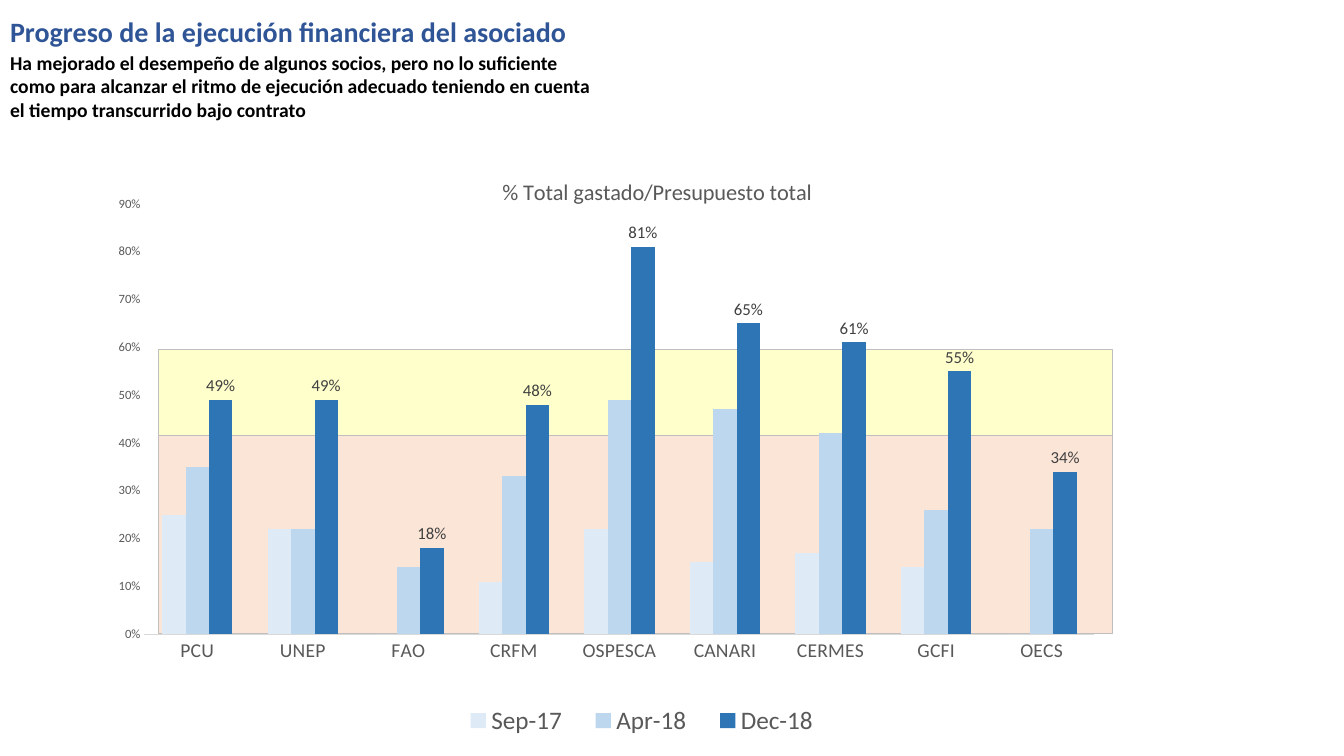
import dataclasses

import pptx
import pptx.chart.data
import pptx.dml.color
import pptx.enum.chart
import pptx.enum.shapes
import pptx.enum.text
import pptx.oxml
import pptx.oxml.ns
import pptx.util

WIDTH, HEIGHT = 13.33, 7.5
PERIODS = {
    "Sep-17": ("DEEBF7", (0.25, 0.22, 0, 0.11, 0.22, 0.15, 0.17, 0.14, 0)),
    "Apr-18": ("BDD7EE", (0.35, 0.22, 0.14, 0.33, 0.49, 0.47, 0.42, 0.26, 0.22)),
    "Dec-18": ("2E75B6", (0.49, 0.49, 0.18, 0.48, 0.81, 0.65, 0.61, 0.55, 0.34)),
}
PARTNERS = ("PCU", "UNEP", "FAO", "CRFM", "OSPESCA", "CANARI", "CERMES", "GCFI", "OECS")


def color(value):
    return pptx.dml.color.RGBColor.from_string(value)


def apply(target, **formats):
    for name, value in formats.items():
        setattr(target, name, value)


def chart_xml(content):
    return pptx.oxml.parse_xml(content.replace(">", f" {pptx.oxml.ns.nsdecls('c', 'a')}>", 1))


def arrange(element, index, **shares):
    for layout in element.findall(pptx.oxml.ns.qn("c:layout")):
        element.remove(layout)
    modes = '<c:xMode val="edge"/><c:yMode val="edge"/>'
    inner = '<c:layoutTarget val="inner"/>' if index == 0 else ""
    values = "".join(f'<c:{name} val="{share}"/>' for name, share in shares.items())
    element.insert(index, chart_xml(
        f"<c:layout><c:manualLayout>{inner}{modes}{values}</c:manualLayout></c:layout>"))


@dataclasses.dataclass
class SlideBuilder:
    page: object
    font: str = "Calibri"
    gray: str = "595959"

    def area(self, left, top, width, height):
        shares = zip((left, top, width, height), (WIDTH, HEIGHT) * 2)
        return [pptx.util.Inches(share * length / 100) for share, length in shares]

    def place(self, item, area):
        apply(item, **dict(zip(("left", "top", "width", "height"), self.area(*area))))

    def type_style(self, font, size, ink=None, bold=False):
        apply(font, name=self.font, size=pptx.util.Pt(size), bold=bold)
        font.color.rgb = color(ink or self.gray)

    def text(self, box, area, content, size, ink):
        self.place(box, area)
        apply(box.text_frame, text=content, word_wrap=True,
              vertical_anchor=pptx.enum.text.MSO_ANCHOR.TOP,
              auto_size=pptx.enum.text.MSO_AUTO_SIZE.NONE)
        para = box.text_frame.paragraphs[0]
        apply(para, alignment=pptx.enum.text.PP_ALIGN.LEFT, line_spacing=1.0,
              space_before=pptx.util.Pt(0))
        properties = para._p.get_or_add_pPr()
        properties.set("marL", "0")
        properties.set("indent", "0")
        properties.append(chart_xml("<a:buNone></a:buNone>"))
        self.type_style(para.runs[0].font, size, ink, bold=True)

    def band(self, area, fill):
        shape = self.page.shapes.add_shape(
            pptx.enum.shapes.MSO_SHAPE.RECTANGLE, *self.area(*area))
        shape.shadow.inherit = False
        shape.fill.solid()
        shape.fill.fore_color.rgb = color(fill)
        shape.line.color.rgb = color("BFBFBF")
        shape.line.width = pptx.util.Pt(0.75)

    def column_chart(self, area, title):
        enums = pptx.enum.chart
        data = pptx.chart.data.CategoryChartData(number_format="0%")
        data.categories = PARTNERS
        for period, (_, values) in PERIODS.items():
            data.add_series(period, values)
        chart = self.page.shapes.add_chart(
            enums.XL_CHART_TYPE.COLUMN_CLUSTERED, *self.area(*area), data).chart
        self.type_style(chart.font, 10, "000000")
        apply(chart, has_title=True, has_legend=True)
        self.chart_title(chart, title)
        self.chart_legend(chart)
        self.chart_axes(chart)
        self.chart_series(chart.plots[0])
        space = chart._chartSpace
        plot_area = space.chart.plotArea
        arrange(plot_area, 0, x=0.097, y=0.137, w=0.894, h=0.648)
        clear = "<c:spPr><a:noFill/><a:ln><a:noFill/></a:ln></c:spPr>"
        plot_area.append(chart_xml(clear))
        space.chart.addnext(chart_xml(clear))

    def chart_title(self, chart, content):
        frame = chart.chart_title.text_frame
        frame.text = content
        self.type_style(frame.paragraphs[0].runs[0].font, 16)
        arrange(chart.chart_title._element, 1, x=0.43, y=0.09)

    def chart_legend(self, chart):
        apply(chart.legend, position=pptx.enum.chart.XL_LEGEND_POSITION.BOTTOM,
              include_in_layout=False)
        self.type_style(chart.legend.font, 18)
        arrange(chart.legend._element, 1, x=0.38, y=0.88, w=0.37, h=0.07)

    def chart_axes(self, chart):
        none = pptx.enum.chart.XL_TICK_MARK.NONE
        for axis, size in ((chart.category_axis, 14), (chart.value_axis, 9)):
            apply(axis, has_major_gridlines=False, major_tick_mark=none, minor_tick_mark=none)
            self.type_style(axis.tick_labels.font, size)
        chart.category_axis.format.line.color.rgb = color("D9D9D9")
        chart.category_axis.format.line.width = pptx.util.Pt(0.75)
        apply(chart.value_axis, minimum_scale=0, maximum_scale=0.9, major_unit=0.1)
        apply(chart.value_axis.tick_labels, number_format="0%", number_format_is_linked=False)
        chart.value_axis.format.line.fill.background()

    def chart_series(self, plot):
        apply(plot, gap_width=150, overlap=0, vary_by_categories=False)
        for series, (fill, _) in zip(plot.series, PERIODS.values()):
            series.format.fill.solid()
            series.format.fill.fore_color.rgb = color(fill)
        labels = plot.series[-1].data_labels
        apply(labels, show_value=True, number_format="0%", number_format_is_linked=False,
              position=pptx.enum.chart.XL_LABEL_POSITION.OUTSIDE_END)
        self.type_style(labels.font, 12, "404040")


def main():
    deck = pptx.Presentation()
    apply(deck, slide_width=pptx.util.Inches(WIDTH), slide_height=pptx.util.Inches(HEIGHT))
    page = deck.slides.add_slide(deck.slide_layouts[1])
    builder = SlideBuilder(page)
    builder.text(page.shapes.title, (0, 1.2, 45.24, 7.73),
                 "Progreso de la ejecución financiera del asociado", 20, "2F5597")
    builder.text(page.placeholders[1], (0, 6, 45.24, 7.73),
                 "Ha mejorado el desempeño de algunos socios, pero no lo suficiente como para "
                 "alcanzar el ritmo de ejecución adecuado teniendo en cuenta el tiempo "
                 "transcurrido bajo contrato", 14, "000000")
    builder.band((11.78, 46.27, 70.97, 11.33), "FFFFCC")
    builder.band((11.78, 57.6, 70.97, 26.27), "FBE5D6")
    builder.column_chart((3.08, 14.93, 79.07, 87.87), "% Total gastado/Presupuesto total")
    deck.save("out.pptx")


if __name__ == "__main__":
    main()
